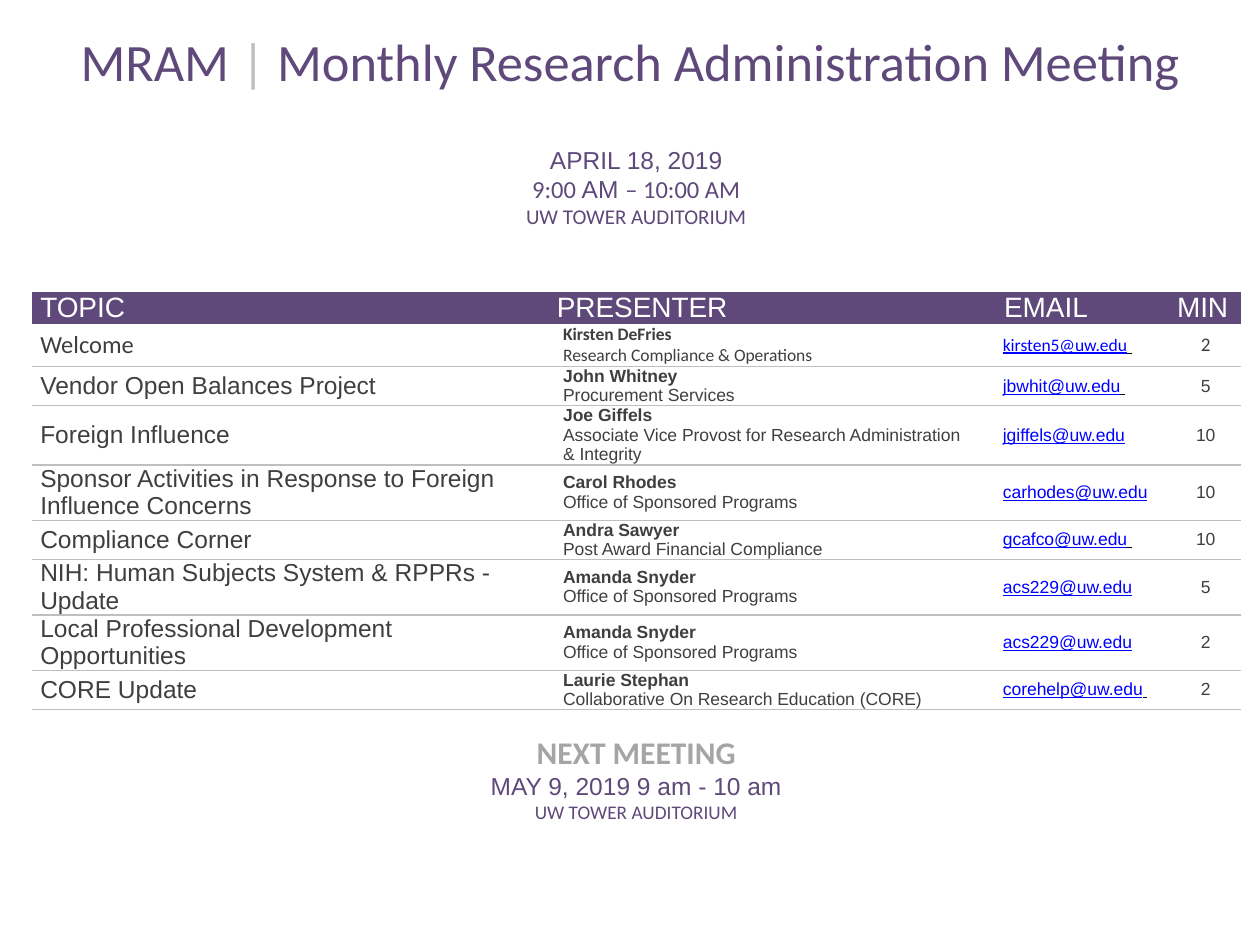
from lxml import etree
from pptx import Presentation
from pptx.dml.color import RGBColor
from pptx.enum.text import MSO_ANCHOR, PP_ALIGN
from pptx.oxml.ns import qn
from pptx.util import Inches, Pt

LEFT, CENTER = PP_ALIGN.LEFT, PP_ALIGN.CENTER
TOP, MIDDLE, BOTTOM = MSO_ANCHOR.TOP, MSO_ANCHOR.MIDDLE, MSO_ANCHOR.BOTTOM

THEME = {
    "purple": "5F497A", "rule": "BFBFBF", "text": "3F3F3F", "muted": "A5A5A5",
    "link": "0000FF", "black": "000000", "white": "FFFFFF",
    "sans": "Arial", "humanist": "Calibri",
    "title": 30, "next": 18, "header": 16, "topic": 14, "place": 12,
    "small": 11, "detail": 10,
}
SANS, HUMANIST = "sans", "humanist"

# Agenda: topic, presenter, office, email, trailing space, minutes, row height
AGENDA = [
    ("Welcome", "Kirsten DeFries", "Research Compliance & Operations",
     "kirsten5@uw.edu", True, 2, 0.34),
    ("Vendor Open Balances Project", "John Whitney", "Procurement Services",
     "jbwhit@uw.edu", True, 5, 0.31),
    ("Foreign Influence", "Joe Giffels",
     "Associate Vice Provost for Research Administration & Integrity",
     "jgiffels@uw.edu", False, 10, 0.47),
    ("Sponsor Activities in Response to Foreign Influence Concerns",
     "Carol Rhodes", "Office of Sponsored Programs",
     "carhodes@uw.edu", False, 10, 0.44),
    ("Compliance Corner", "Andra Sawyer", "Post Award Financial Compliance",
     "gcafco@uw.edu", True, 10, 0.31),
    ("NIH: Human Subjects System & RPPRs - Update", "Amanda Snyder",
     "Office of Sponsored Programs", "acs229@uw.edu", False, 5, 0.44),
    ("Local Professional Development Opportunities", "Amanda Snyder",
     "Office of Sponsored Programs", "acs229@uw.edu", False, 2, 0.44),
    ("CORE Update", "Laurie Stephan",
     "Collaborative On Research Education (CORE)",
     "corehelp@uw.edu", True, 2, 0.31),
]
COLUMNS = [4.1, 3.49, 1.45, 0.56]
ROWS = [0.51, 1.56, 0.25] + [item[-1] for item in AGENDA] + [0.85]
HEADER_ROW, LAST_ROW = 2, len(ROWS) - 1


def fill_cell(cell, paragraphs, align=LEFT, anchor=MIDDLE,
              margins=(0.07, 0, 0.07, 0), fill="white"):
    """Each paragraph is a list of (text, size, font, colour, extras) runs."""
    cell.fill.solid()
    cell.fill.fore_color.rgb = RGBColor.from_string(THEME[fill])
    cell.vertical_anchor = anchor
    for side, inset in zip(("left", "top", "right", "bottom"), margins):
        setattr(cell, f"margin_{side}", Inches(inset))
    tf = cell.text_frame
    for i, runs in enumerate(paragraphs):
        p = tf.add_paragraph() if i else tf.paragraphs[0]
        p.alignment = align
        for text, size, font, colour, extras in runs:
            r = p.add_run()
            r.text = text
            look = {"size": Pt(THEME[size]), "name": THEME[font], "bold": False}
            for key, value in {**look, **extras}.items():
                setattr(r.font, key, value)
            r.font.color.rgb = RGBColor.from_string(THEME[colour])


def set_borders(cell, ruled):
    """Draw a rule on the sides in ruled and clear the other sides."""
    tc_pr = cell._tc.get_or_add_tcPr()
    for i, side in enumerate(("lnL", "lnR", "lnT", "lnB")):
        ln = etree.Element(qn(f"a:{side}"), w=str(Pt(1)))
        if side in ruled:
            solid = etree.SubElement(ln, qn("a:solidFill"))
            etree.SubElement(solid, qn("a:srgbClr"), val=THEME["rule"])
        else:
            etree.SubElement(ln, qn("a:noFill"))
        tc_pr.insert(i, ln)


prs = Presentation()
prs.slide_width, prs.slide_height = Inches(10), Inches(7.5)
s = prs.slides.add_slide(prs.slide_layouts[6])

# Table grid
table = s.shapes.add_table(
    len(ROWS), len(COLUMNS), Inches(0.25), Inches(0.25),
    Inches(sum(COLUMNS)), Inches(sum(ROWS))).table
table.first_row = table.horz_banding = False
for column, width in zip(table.columns, COLUMNS):
    column.width = Inches(width)
for row, height in zip(table.rows, ROWS):
    row.height = Inches(height)
for row in (0, 1, LAST_ROW):
    table.cell(row, 0).merge(table.cell(row, len(COLUMNS) - 1))

# Title
fill_cell(table.cell(0, 0), [[
    ("MRAM ", "title", HUMANIST, "purple", {}),
    ("|", "title", HUMANIST, "rule", {}),
    (" Monthly Research Administration Meeting ", "title", HUMANIST, "purple", {}),
]], CENTER, BOTTOM)

# Date, time and place
fill_cell(table.cell(1, 0), [
    [("APRIL 18, 2019", "topic", SANS, "purple", {})],
    [("9:00 ", "topic", HUMANIST, "purple", {}),
     ("AM ", "topic", SANS, "purple", {}),
     ("– 10:00 AM", "topic", HUMANIST, "purple", {})],
    [("UW TOWER AUDITORIUM", "place", HUMANIST, "purple", {})],
], CENTER, BOTTOM, (0.07, 0, 0.07, 0.49))

# Column headings
for col, (label, align, inset) in enumerate([
        ("TOPIC", LEFT, 0.07), ("PRESENTER", LEFT, 0.07),
        ("EMAIL", LEFT, 0.13), ("MIN", CENTER, 0.02)]):
    fill_cell(table.cell(HEADER_ROW, col),
              [[(label, "header", SANS, "white", {})]],
              align, margins=(inset, 0, 0.07, 0), fill="purple")

# Agenda items; the welcome row has its own font
for i, (topic, name, office, email, spaced, minutes, _) in enumerate(AGENDA):
    font = SANS if i else HUMANIST
    cells = table.rows[HEADER_ROW + 1 + i].cells
    address = [(email, "detail", font, "link", {"underline": True})]
    if spaced:
        address.append((" ", "detail", SANS, "black", {"underline": True}))
    fill_cell(cells[0], [[(topic, "topic", font, "text", {})]])
    fill_cell(cells[1], [[(name, "detail", font, "text", {"bold": True})],
                         [(office, "detail", font, "text", {})]],
              margins=(0.12, 0, 0.12, 0))
    fill_cell(cells[2], [address], margins=(0.12, 0, 0, 0))
    fill_cell(cells[3], [[(str(minutes), "detail" if i else "small",
                           font, "text", {})]], CENTER)

# Next meeting
fill_cell(table.cell(LAST_ROW, 0), [
    [("NEXT MEETING", "next", HUMANIST, "muted", {"bold": True})],
    [("MAY 9, 2019 9 am - 10 am", "topic", SANS, "purple", {})],
    [("UW TOWER AUDITORIUM", "small", HUMANIST, "purple", {})],
], CENTER, TOP, (0.07, 0.2, 0.07, 0))

# Rules below each agenda item
for row in range(len(ROWS)):
    ruled = [side for side, shown in (
        ("lnT", row > HEADER_ROW + 1),
        ("lnB", HEADER_ROW < row < LAST_ROW)) if shown]
    for cell in table.rows[row].cells:
        set_borders(cell, ruled)

prs.save("out.pptx")
